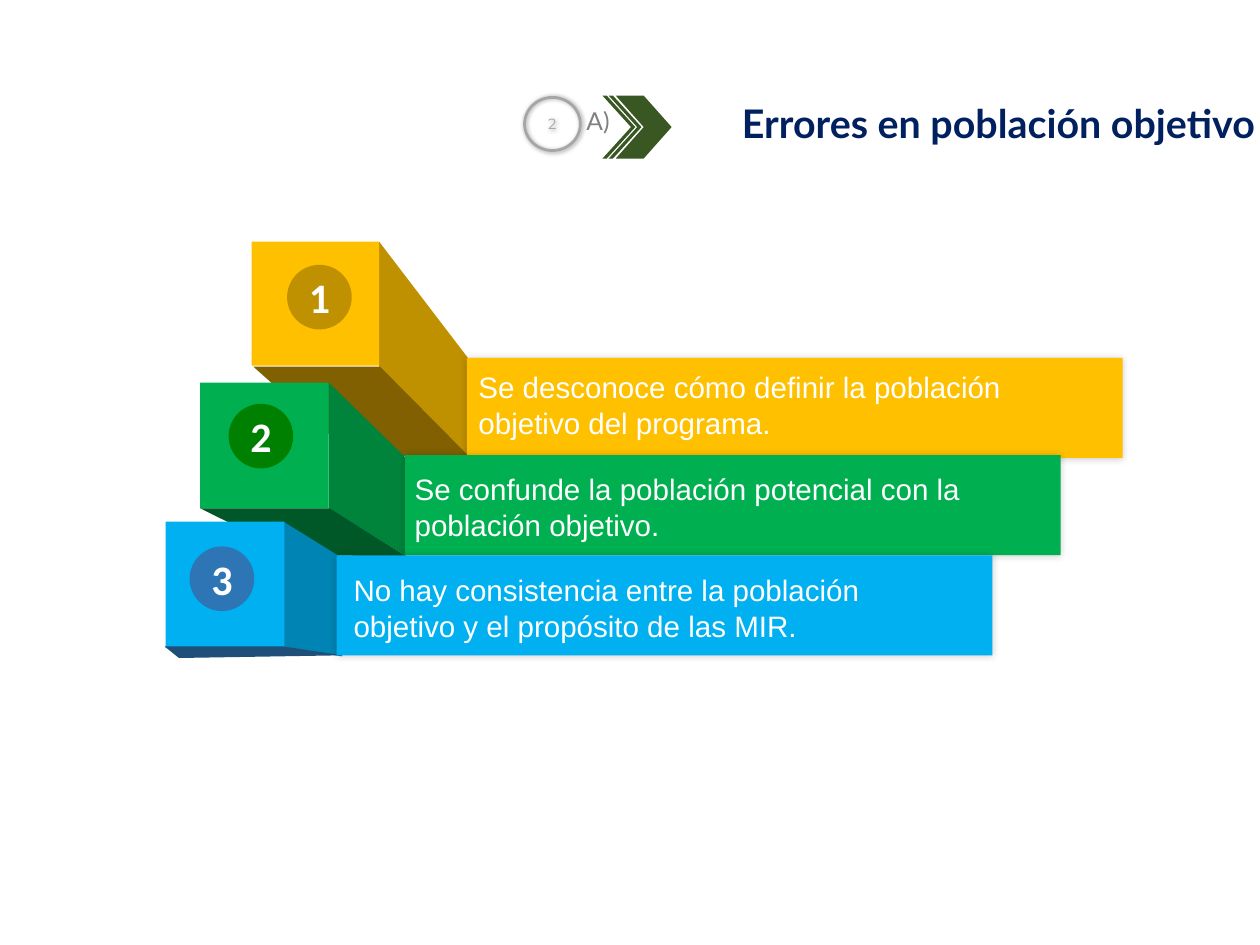
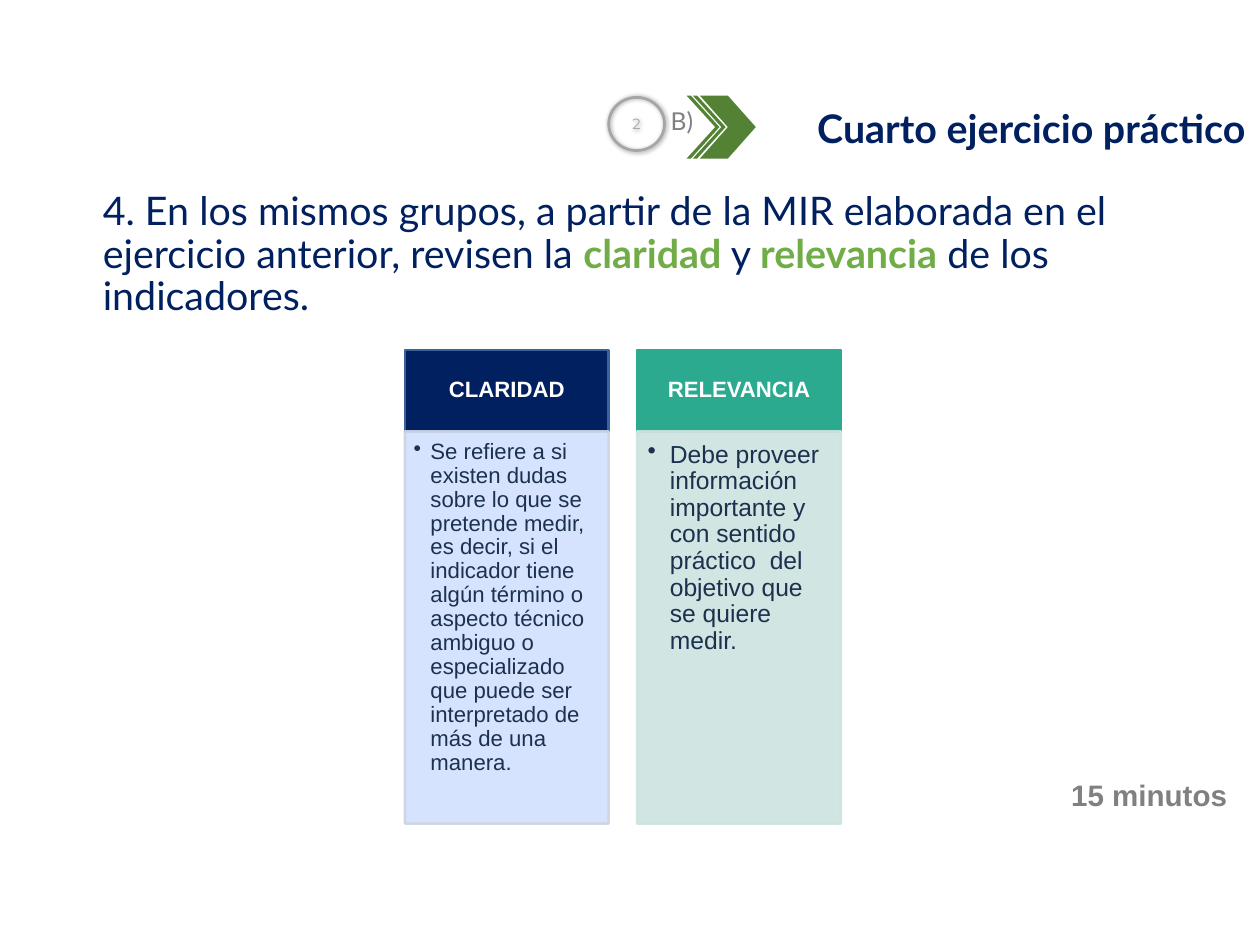
from dataclasses import dataclass

from pptx import Presentation
from pptx.dml.color import RGBColor
from pptx.enum.shapes import MSO_SHAPE
from pptx.enum.text import MSO_ANCHOR, MSO_AUTO_SIZE, PP_ALIGN
from pptx.oxml import parse_xml
from pptx.oxml.ns import nsdecls, qn
from pptx.util import Inches, Pt

RECTANGLE, ELLIPSE, CHEVRON = MSO_SHAPE.RECTANGLE, MSO_SHAPE.OVAL, MSO_SHAPE.CHEVRON
TOP, MIDDLE = MSO_ANCHOR.TOP, MSO_ANCHOR.MIDDLE
LEFT, CENTER, RIGHT = PP_ALIGN.LEFT, PP_ALIGN.CENTER, PP_ALIGN.RIGHT
NO_AUTOFIT = MSO_AUTO_SIZE.NONE

WHITE = RGBColor(0xFF, 0xFF, 0xFF)
NAVY = RGBColor(0x00, 0x20, 0x60)
NAVY_EDGE = RGBColor(0x39, 0x63, 0x9D)
INK = RGBColor(0x1C, 0x31, 0x4E)
GRAY = RGBColor(0x80, 0x80, 0x80)
LIGHT_GRAY = RGBColor(0xA6, 0xA6, 0xA6)
DARK_GREEN = RGBColor(0x38, 0x57, 0x23)
MID_GREEN = RGBColor(0x54, 0x82, 0x35)
KEYWORD_GREEN = RGBColor(0x70, 0xAD, 0x47)
GOLD = RGBColor(0xFF, 0xC0, 0x00)
GOLD_SIDE = RGBColor(0xBF, 0x90, 0x00)
GOLD_BASE = RGBColor(0x80, 0x60, 0x00)
GREEN = RGBColor(0x00, 0xB0, 0x50)
GREEN_SIDE = RGBColor(0x00, 0x84, 0x3C)
GREEN_BASE = RGBColor(0x00, 0x58, 0x28)
GREEN_DISC = RGBColor(0x00, 0x80, 0x00)
BLUE = RGBColor(0x00, 0xB0, 0xF0)
BLUE_SIDE = RGBColor(0x00, 0x84, 0xB4)
BLUE_BASE = RGBColor(0x1F, 0x4E, 0x79)
BLUE_DISC = RGBColor(0x2E, 0x75, 0xB6)
TEAL = RGBColor(0x2B, 0xAA, 0x90)
PALE_BLUE = RGBColor(0xD1, 0xE0, 0xFF)
PALE_EDGE = RGBColor(0xCE, 0xD3, 0xDF)
PALE_TEAL = RGBColor(0xCD, 0xE3, 0xDF)

Box = tuple[float, float, float, float]
Points = list[tuple[float, float]]
DEFAULT_INSETS = (0.1, 0.05, 0.1, 0.05)


@dataclass
class Span:
    text: str
    color: RGBColor
    bold: bool = False


@dataclass
class Shadow:
    opacity: int
    blur: float
    distance: float
    angle: int


@dataclass
class Header:
    title: str
    title_box: Box
    line_spacing: float
    right_inset: float
    letter: str
    badge_left: float
    color: RGBColor


@dataclass
class Step:
    number: str
    text: str
    front: Box
    side: Points
    base: Points
    bar: tuple[float, float]
    text_inset: tuple[float, float]
    disc: tuple[float, float]
    colors: tuple[RGBColor, RGBColor, RGBColor, RGBColor]  # front, side, base, disc


@dataclass
class Card:
    heading: str
    text: str
    size: int
    indent: float
    insets: Box
    heading_colors: tuple[RGBColor, RGBColor]
    panel_colors: tuple[RGBColor, RGBColor]


BAR_SHADOW = Shadow(20, 6, 0, 315)
BADGE_SHADOW = Shadow(40, 4, 1, 45)
BAR_WIDTH, BAR_HEIGHT, DISC_SIZE = 7.4, 1.13, 0.73
CARD_LEFT, CARD_TOP, CARD_WIDTH, CARD_PITCH = 4.57, 3.95, 2.3, 2.62
HEADING_HEIGHT, PANEL_HEIGHT = 0.92, 4.43

ERRORS_HEADER = Header("Errores en población objetivo", (6.71, 1.07, 7.56, 0.64),
                       1.0, 0.1, "A)", 5.92, DARK_GREEN)
EXERCISE_HEADER = Header("Cuarto ejercicio práctico", (1.93, 1.08, 12.27, 0.68),
                         1.1, 0.14, "B)", 6.87, MID_GREEN)

STEPS = [
    Step("1", "Se desconoce cómo definir la población objetivo del programa.",
         (2.84, 2.73, 1.44, 1.4),
         [(4.28, 2.73), (5.28, 4.04), (5.28, 5.16), (4.28, 4.14)],
         [(2.86, 4.14), (4.29, 4.14), (5.29, 5.15), (3.99, 5.15)],
         (5.27, 4.04), (0.13, 0.13), (3.24, 2.99),
         (GOLD, GOLD_SIDE, GOLD_BASE, GOLD_SIDE)),
    Step("2", "Se confunde la población potencial con la población objetivo.",
         (2.26, 4.32, 1.45, 1.42),
         [(3.71, 4.32), (4.58, 5.17), (4.58, 6.28), (3.71, 5.74)],
         [(2.26, 5.74), (3.72, 5.74), (4.58, 6.28), (3.33, 6.27)],
         (4.57, 5.14), (0.11, 0.18), (2.58, 4.56),
         (GREEN, GREEN_SIDE, GREEN_BASE, GREEN_DISC)),
    Step("3", "No hay consistencia entre la población objetivo y el propósito de las MIR.",
         (1.87, 5.89, 1.34, 1.43),
         [(3.2, 5.89), (3.86, 6.3), (3.86, 7.41), (3.19, 7.31)],
         [(1.86, 7.3), (3.2, 7.3), (3.86, 7.4), (2.02, 7.43)],
         (3.8, 6.27), (0.19, 0.19), (2.14, 6.17),
         (BLUE, BLUE_SIDE, BLUE_BASE, BLUE_DISC)),
]

INSTRUCTION = [
    Span("4. En los mismos grupos, a partir de la MIR elaborada en el ejercicio anterior, "
         "revisen la ", NAVY),
    Span("claridad", KEYWORD_GREEN, True),
    Span(" y ", NAVY),
    Span("relevancia", KEYWORD_GREEN, True),
    Span(" de los indicadores.", NAVY),
]

CARDS = [
    Card("CLARIDAD",
         "Se refiere a si existen dudas sobre lo que se pretende medir, es decir, si el "
         "indicador tiene algún término o aspecto técnico ambiguo o especializado que puede "
         "ser interpretado de más de una manera.",
         18, 0.19, (0.1, 0.1, 0.14, 0.16), (NAVY, NAVY_EDGE), (PALE_BLUE, PALE_EDGE)),
    Card("RELEVANCIA",
         "Debe proveer información importante y con sentido práctico  del objetivo que se "
         "quiere medir.",
         20, 0.25, (0.12, 0.12, 0.16, 0.17), (TEAL, TEAL), (PALE_TEAL, PALE_TEAL)),
]


def write(shape, spans: list[Span], *, font: str, size: float, align=LEFT, anchor=TOP,
          insets: Box = DEFAULT_INSETS, line_spacing: float = 1.0, wrap: bool = True,
          bullet: str = "", indent: float = 0) -> None:
    """Fill the shape with one paragraph made of the spans."""
    frame = shape.text_frame
    frame.auto_size = NO_AUTOFIT
    frame.word_wrap = wrap
    frame.vertical_anchor = anchor
    (frame.margin_left, frame.margin_top,
     frame.margin_right, frame.margin_bottom) = map(Inches, insets)
    para = frame.paragraphs[0]
    properties = para._p.get_or_add_pPr()
    properties.set("marL", str(Inches(indent)))
    properties.set("indent", str(-Inches(indent)))
    mark = f'<a:buChar {nsdecls("a")} char="{bullet}"/>' if bullet else f'<a:buNone {nsdecls("a")}/>'
    properties.append(parse_xml(mark))
    para.alignment = align
    para.line_spacing = line_spacing
    para.space_before = Pt(0)
    for span in spans:
        run = para.add_run()
        run.text = span.text
        run.font.name = font
        run.font.size = Pt(size)
        run.font.bold = span.bold
        run.font.color.rgb = span.color


def paint(shape, fill: RGBColor | None, line: RGBColor | None = None, width: float = 2,
          opacity: int = 100, shadow: Shadow | None = None) -> None:
    shape.shadow.inherit = False
    if fill is None:
        shape.fill.background()
    else:
        shape.fill.solid()
        shape.fill.fore_color.rgb = fill
    if line is None:
        shape.line.fill.background()
    else:
        shape.line.color.rgb = line
        shape.line.width = Pt(width)
    properties = shape._element.spPr
    if opacity < 100:
        for color in list(properties.iter(qn("a:srgbClr"))):
            color.append(parse_xml(f'<a:alpha {nsdecls("a")} val="{opacity * 1000}"/>'))
    if shadow:
        properties.find(qn("a:effectLst")).append(parse_xml(
            f'<a:outerShdw {nsdecls("a")} blurRad="{Pt(shadow.blur)}" '
            f'dist="{Pt(shadow.distance)}" dir="{shadow.angle * 60000}" rotWithShape="0">'
            f'<a:srgbClr val="000000"><a:alpha val="{shadow.opacity * 1000}"/></a:srgbClr>'
            '</a:outerShdw>'))


def add_preset(page, kind, box: Box, fill: RGBColor | None, **style):
    shape = page.shapes.add_shape(kind, *map(Inches, box))
    paint(shape, fill, **style)
    return shape


def add_polygon(page, points: Points, fill: RGBColor) -> None:
    corners = [(Inches(x), Inches(y)) for x, y in points]
    builder = page.shapes.build_freeform(*corners[0])
    builder.add_line_segments(corners[1:], close=True)
    paint(builder.convert_to_shape(), fill)


def add_label(page, box: Box, span: Span, **style) -> None:
    write(page.shapes.add_textbox(*map(Inches, box)), [span], wrap=False, **style)


def place(shape, box: Box) -> None:
    shape.left, shape.top, shape.width, shape.height = map(Inches, box)


def add_header(page, header: Header) -> None:
    """Title, with the numbered ring, the letter and the triple chevron before it."""
    title = page.shapes.title
    place(title, header.title_box)
    write(title, [Span(header.title, NAVY, True)], font="Lato", size=32, align=RIGHT,
          anchor=MIDDLE, insets=(0.1, 0.05, header.right_inset, 0.05),
          line_spacing=header.line_spacing)
    left = header.badge_left
    add_preset(page, CHEVRON, (left + 1.03, 1.08, 0.63, 0.71), header.color)
    for offset in (0.95, 0.88):
        sliver = add_preset(page, CHEVRON, (left + offset, 1.08, 0.37, 0.71), header.color)
        sliver.adjustments[0] = 0.87
    add_label(page, (left + 0.6, 1.15, 0.48, 0.44), Span(header.letter, GRAY),
              font="Lato", size=20)
    ring = add_preset(page, ELLIPSE, (left, 1.1, 0.63, 0.6), None, line=LIGHT_GRAY,
                      width=2.25, shadow=BADGE_SHADOW)
    write(ring, [Span("2", LIGHT_GRAY)], font="Montserrat", size=12, align=CENTER,
          anchor=MIDDLE)


def add_step(page, step: Step) -> None:
    front, side, base, disc_color = step.colors
    add_polygon(page, step.side, side)
    add_preset(page, RECTANGLE, step.front, front)
    add_polygon(page, step.base, base)
    bar = add_preset(page, RECTANGLE, (*step.bar, BAR_WIDTH, BAR_HEIGHT), front,
                     shadow=BAR_SHADOW)
    write(bar, [Span(step.text, WHITE)], font="Arial", size=24,
          insets=(*step.text_inset, 0.5, 0))
    disc = add_preset(page, ELLIPSE, (*step.disc, DISC_SIZE, DISC_SIZE), disc_color)
    write(disc, [Span(step.number, WHITE, True)], font="Calibri", size=34.1, align=CENTER,
          anchor=MIDDLE, insets=(0, 0, 0, 0))


def add_card(page, card: Card, left: float) -> None:
    fill, edge = card.heading_colors
    heading = add_preset(page, RECTANGLE, (left, CARD_TOP, CARD_WIDTH, HEADING_HEIGHT),
                         fill, line=edge)
    write(heading, [Span(card.heading, WHITE, True)], font="Arial", size=18, align=CENTER,
          anchor=MIDDLE, insets=(0.14, 0.08, 0.14, 0.08), line_spacing=0.9)
    fill, edge = card.panel_colors
    panel = add_preset(page, RECTANGLE,
                       (left, CARD_TOP + HEADING_HEIGHT, CARD_WIDTH, PANEL_HEIGHT),
                       fill, line=edge, opacity=90)
    write(panel, [Span(card.text, INK)], font="Arial", size=card.size, insets=card.insets,
          line_spacing=0.9, bullet="•", indent=card.indent)


def build_errors_page(deck) -> None:
    page = deck.slides.add_slide(deck.slide_layouts.get_by_name("Title Only"))
    add_header(page, ERRORS_HEADER)
    for step in STEPS:
        add_step(page, step)


def build_exercise_page(deck) -> None:
    page = deck.slides.add_slide(deck.slide_layouts.get_by_name("Title and Content"))
    add_header(page, EXERCISE_HEADER)
    body = page.placeholders[1]
    place(body, (1.06, 1.94, 12.27, 1.89))
    write(body, INSTRUCTION, font="Lato", size=32, anchor=MIDDLE, line_spacing=0.9)
    for index, card in enumerate(CARDS):
        add_card(page, card, CARD_LEFT + index * CARD_PITCH)
    add_label(page, (11.99, 8.72, 1.98, 0.5), Span("15 minutos", GRAY, True),
              font="Arial", size=24)


def main() -> None:
    deck = Presentation()
    deck.slide_width, deck.slide_height = Inches(14.22), Inches(10.67)
    build_errors_page(deck)
    build_exercise_page(deck)
    deck.save("out.pptx")


if __name__ == "__main__":
    main()
